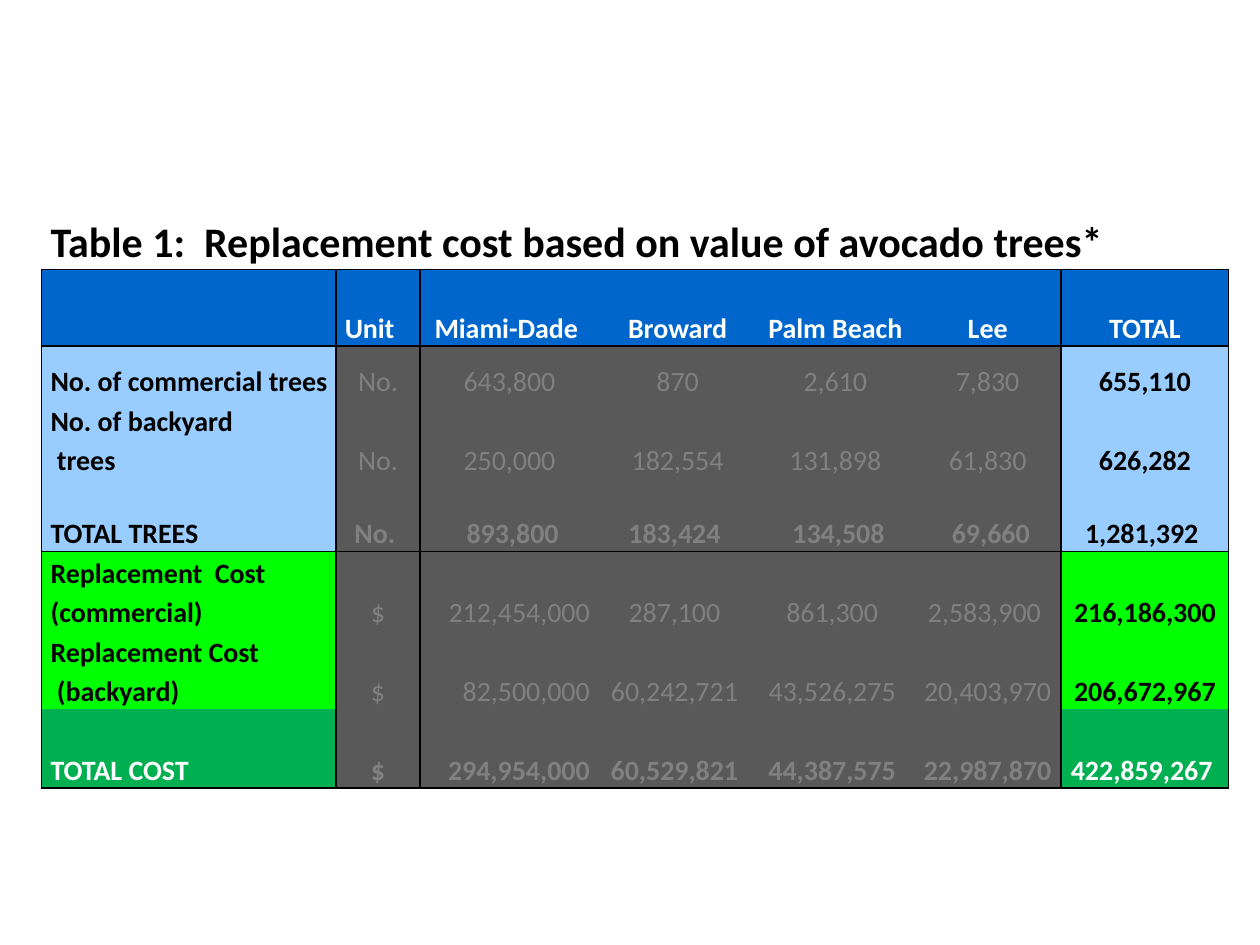
"""Build the slide with the replacement cost table for avocado trees."""
from lxml import etree
from pptx import Presentation
from pptx import util as u
from pptx.dml.color import RGBColor
from pptx.enum import text
from pptx.oxml import ns

COLORS = {
    "black": "000000", "white": "FFFFFF", "header": "0066CC", "trees": "99CCFF",
    "cost": "00FF00", "total": "00B050", "figures": "595959", "muted": "808080",
}
TITLE = "Table 1:  Replacement cost based on value of avocado trees*"
ROWS = [
    [TITLE, "", "", "", "", "", ""],
    ["", "Unit", "Miami-Dade ", "Broward", "Palm Beach", "Lee", "TOTAL"],
    ["No. of commercial trees", "No.", "643,800", "870", "2,610", "7,830", "655,110"],
    ["No. of backyard\n trees", "No.", "250,000", "182,554", "131,898", "61,830", "626,282"],
    ["TOTAL TREES", "No. ", " 893,800", "183,424 ", " 134,508", " 69,660", "1,281,392 "],
    ["Replacement  Cost (commercial)", "$", "212,454,000", "287,100 ", "861,300 ",
     "2,583,900 ", "216,186,300"],
    ["Replacement Cost\n (backyard)", "$", "82,500,000", "60,242,721 ", "43,526,275 ",
     "20,403,970 ", "206,672,967"],
    ["TOTAL COST", "$", "294,954,000", "60,529,821 ", "44,387,575 ", "22,987,870 ",
     "422,859,267 "],
]
WIDTHS = [5.93, 1.7, 3.6, 3.18, 3.18, 2.96, 3.38]
HEIGHTS = [1.16, 1.55, 1.07, 1.59, 1.48, 1.59, 1.59, 1.59]
ROW_FILLS = [None, "header", "trees", "trees", "trees", "cost", "cost", "total"]
LAST = len(WIDTHS) - 1
SUM_ROWS = (4, 7)
COST_ROWS = (5, 6, 7)
LINED_ROWS = {"lnT": (1, 2, 5), "lnB": (0, 1, 4, 7)}
LINED_COLUMNS = {"lnL": (0, 1, 2, LAST), "lnR": (0, 1, 5, LAST)}


class CostSlide:
    """Hold the table style and the current slide."""

    font = "Calibri"
    cell_format = {
        "vertical_anchor": text.MSO_ANCHOR.BOTTOM,
        "margin_left": u.Cm(0.18), "margin_right": u.Cm(0.18),
        "margin_top": 0, "margin_bottom": 0,
    }

    def __init__(self, deck):
        """Add an empty slide to the deck."""
        self.slide = deck.slides.add_slide(deck.slide_layouts[6])

    def borders(self, cell, row, column):
        """Draw the lines around the blocks of the table."""
        properties = cell._tc.get_or_add_tcPr()
        for side in ("lnL", "lnR", "lnT", "lnB"):
            if side in LINED_ROWS:
                lined = row in LINED_ROWS[side]
            else:
                lined = row > 0 and column in LINED_COLUMNS[side]
            line = etree.SubElement(properties, ns.qn(f"a:{side}"), w=str(u.Pt(1)))
            if lined:
                paint = etree.SubElement(line, ns.qn("a:solidFill"))
                etree.SubElement(paint, ns.qn("a:srgbClr"), val=COLORS["black"])
            else:
                etree.SubElement(line, ns.qn("a:noFill"))

    def fill(self, cell, row, column):
        """Fill a cell by its row and its place in the middle block."""
        if row == 0:
            cell.fill.background()
            return
        middle = row > 1 and 0 < column < LAST
        cell.fill.solid()
        cell.fill.fore_color.rgb = RGBColor.from_string(
            COLORS["figures" if middle else ROW_FILLS[row]])

    def words(self, cell, row, column):
        """Write and format the wording of a cell."""
        middle = row > 1 and 0 < column < LAST
        ink = "muted" if middle else "white" if row in (1, 7) else "black"
        align = text.PP_ALIGN.CENTER
        if column == 0 or (row, column) == (1, 1):
            align = text.PP_ALIGN.LEFT
            cell.margin_right = u.Cm(0.1)
        elif column == 2 and row in COST_ROWS:
            align = text.PP_ALIGN.RIGHT
        font_format = {
            "name": self.font, "size": u.Pt(16 if row else 24),
            "bold": not middle or row in SUM_ROWS,
        }
        cell.text = ROWS[row][column]
        for paragraph in cell.text_frame.paragraphs:
            paragraph.alignment = align
            paragraph.line_spacing = 1.15
            for name, value in font_format.items():
                setattr(paragraph.font, name, value)
                for run in paragraph.runs:
                    setattr(run.font, name, value)
            for run in paragraph.runs:
                run.font.color.rgb = RGBColor.from_string(COLORS[ink])

    def table(self, left, top):
        """Add the cost table with its title row."""
        costs = self.slide.shapes.add_table(
            len(ROWS), len(WIDTHS), u.Cm(left), u.Cm(top),
            u.Cm(sum(WIDTHS)), u.Cm(sum(HEIGHTS))).table
        costs.first_row = costs.horz_banding = False
        for column, width in zip(costs.columns, WIDTHS):
            column.width = u.Cm(width)
        for row, height in zip(costs.rows, HEIGHTS):
            row.height = u.Cm(height)
        for row in range(len(ROWS)):
            for column in range(len(WIDTHS)):
                cell = costs.cell(row, column)
                for name, value in self.cell_format.items():
                    setattr(cell, name, value)
                self.borders(cell, row, column)
                self.fill(cell, row, column)
                self.words(cell, row, column)
        costs.cell(0, 0).merge(costs.cell(0, LAST))


def main():
    """Build and save the deck."""
    deck = Presentation()
    deck.slide_width, deck.slide_height = u.Cm(25.4), u.Cm(19.05)
    CostSlide(deck).table(0.84, 4.24)
    deck.save("out.pptx")


if __name__ == "__main__":
    main()
